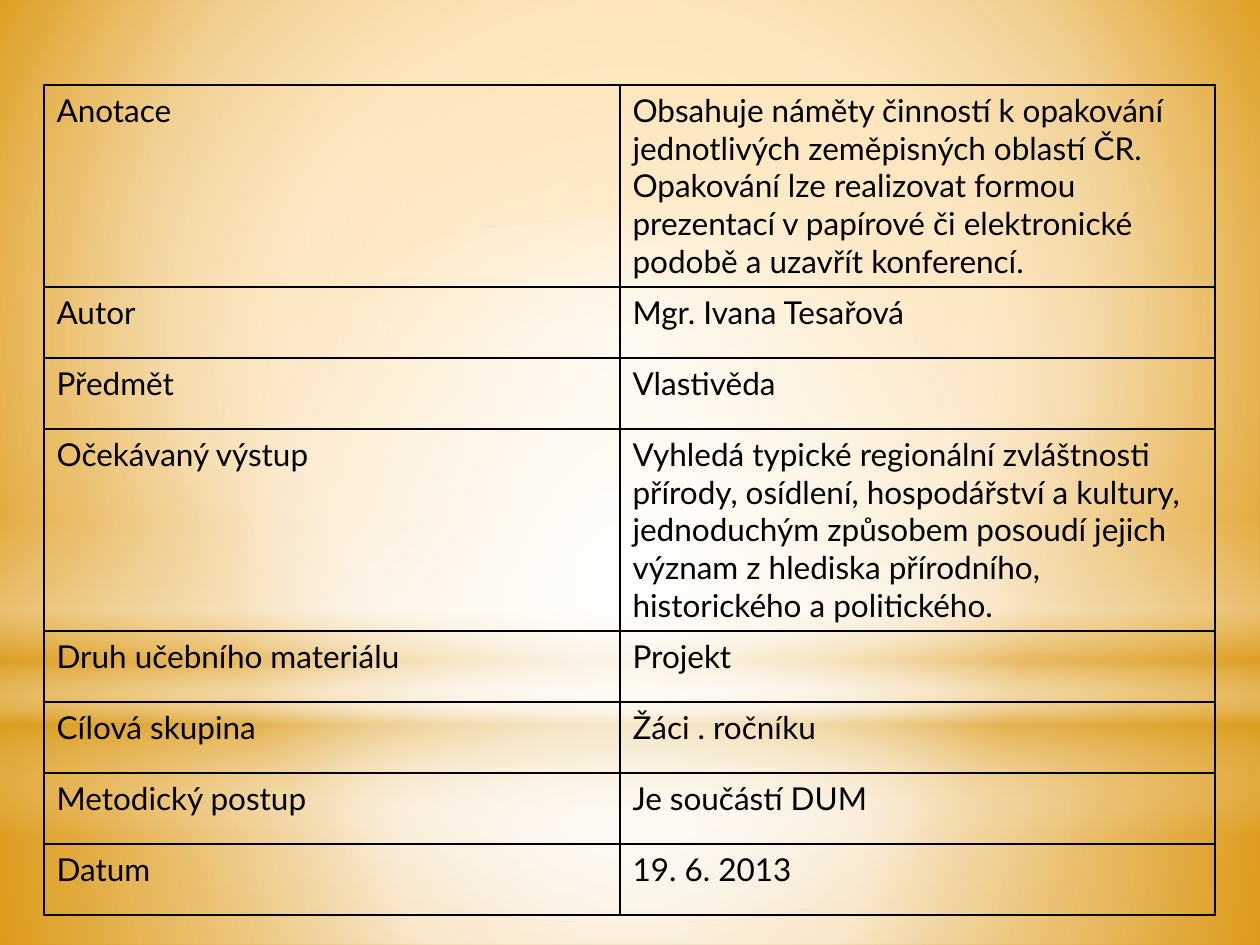
from lxml.etree import SubElement
from pptx import Presentation
from pptx.dml.color import RGBColor
from pptx.enum.shapes import MSO_SHAPE
from pptx.oxml.ns import qn
from pptx.util import Emu, Pt

PX = 914400 // 126
WIDTH, HEIGHT = 1260, 945
COLORS = {"white": "FFFFFF", "gold": "DC9E1F", "amber": "FFA607",
          "sand": "F9CD88", "ochre": "E08E02", "black": "000000"}
CENTER = (50, 50, 50, 50)


class SlideBuilder:
    font, size, border = "Lato", Pt(18), Pt(1)

    def __init__(self, slide):
        self.slide = slide

    def gradient(self, fill, owner, stops, focus=None, angle=0):
        """Stops are (position %, color, opacity %); a focus makes it circular."""
        fill.gradient()
        grad = owner.find(".//" + qn("a:gradFill"))
        for child in list(grad):
            grad.remove(child)
        stop_list = SubElement(grad, qn("a:gsLst"))
        for position, color, opacity in stops:
            stop = SubElement(stop_list, qn("a:gs"), pos=str(position * 1000))
            tint = SubElement(stop, qn("a:srgbClr"), val=COLORS[color])
            if opacity < 100:
                SubElement(tint, qn("a:alpha"), val=str(opacity * 1000))
        if focus:
            circle = SubElement(grad, qn("a:path"), path="circle")
            edges = {side: str(inset * 1000) for side, inset in zip("ltrb", focus)}
            SubElement(circle, qn("a:fillToRect"), **edges)
        else:
            SubElement(grad, qn("a:lin"), ang=str(angle * 60000), scaled="0")

    def background(self, stops, focus):
        self.gradient(self.slide.background.fill, self.slide.element, stops, focus)

    def glow(self, kind, top, height, stops, focus=None, angle=0):
        shape = self.slide.shapes.add_shape(
            kind, 0, Emu(top * PX), Emu(WIDTH * PX), Emu(height * PX))
        shape.shadow.inherit = False
        shape.line.fill.background()
        self.gradient(shape.fill, shape.element, stops, focus, angle)

    def outline(self, cell):
        properties = cell._tc.get_or_add_tcPr()
        for index, side in enumerate(("lnL", "lnR", "lnT", "lnB")):
            line = SubElement(properties, qn("a:" + side), w=str(self.border))
            properties.insert(index, line)
            solid = SubElement(line, qn("a:solidFill"))
            SubElement(solid, qn("a:srgbClr"), val=COLORS["black"])

    def table(self, left, top, widths, heights, rows):
        table = self.slide.shapes.add_table(
            len(rows), len(widths), Emu(left * PX), Emu(top * PX),
            Emu(sum(widths) * PX), Emu(sum(heights) * PX)).table
        table.first_row = table.horz_banding = False
        for column, width in zip(table.columns, widths):
            column.width = Emu(width * PX)
        for row, height, texts in zip(table.rows, heights, rows):
            row.height = Emu(height * PX)
            for cell, text in zip(row.cells, texts):
                cell.fill.background()
                self.outline(cell)
                cell.text_frame.text = text
                for paragraph in cell.text_frame.paragraphs:
                    for run in paragraph.runs:
                        run.font.name, run.font.size = self.font, self.size
                        run.font.color.rgb = RGBColor.from_string(COLORS["black"])


def main():
    presentation = Presentation()
    presentation.slide_width = Emu(WIDTH * PX)
    presentation.slide_height = Emu(HEIGHT * PX)
    builder = SlideBuilder(presentation.slides.add_slide(presentation.slide_layouts[6]))

    # Golden backdrop
    builder.background([(0, "amber", 100), (60, "sand", 100), (100, "ochre", 100)],
                       (20, 10, 20, 60))
    horizon = 703
    builder.glow(MSO_SHAPE.RECTANGLE, horizon, HEIGHT - horizon,
                 [(0, "white", 91), (37, "white", 76), (100, "gold", 79)], CENTER)
    builder.glow(MSO_SHAPE.RECTANGLE, 0, horizon,
                 [(0, "white", 89), (48, "white", 62), (100, "gold", 79)], CENTER)
    builder.glow(MSO_SHAPE.RECTANGLE, 519, 315,
                 [(0, "white", 0), (29, "white", 30), (45, "gold", 40),
                  (55, "white", 26), (65, "gold", 60), (100, "white", 0)], angle=90)
    builder.glow(MSO_SHAPE.OVAL, 220, horizon,
                 [(0, "white", 100), (56, "white", 0)], CENTER)

    # Description of the teaching material
    details = [
        ("Anotace", "Obsahuje náměty činností k opakování jednotlivých zeměpisných "
                    "oblastí ČR.\nOpakování lze realizovat formou prezentací v papírové "
                    "či elektronické podobě a uzavřít konferencí."),
        ("Autor", "Mgr. Ivana Tesařová"),
        ("Předmět", "Vlastivěda"),
        ("Očekávaný výstup", "Vyhledá typické regionální zvláštnosti přírody, osídlení, "
                             "hospodářství a kultury, jednoduchým způsobem posoudí jejich "
                             "význam z hlediska přírodního, historického a politického."),
        ("Druh učebního materiálu", "Projekt"),
        ("Cílová skupina", "Žáci . ročníku"),
        ("Metodický postup", "Je součástí DUM"),
        ("Datum", "19. 6. 2013"),
    ]
    tall, short = 202, 71
    heights = [tall if len(text) > 50 else short for _, text in details]
    builder.table(44, 85, (576, 595), heights, details)

    presentation.save("out.pptx")


if __name__ == "__main__":
    main()
